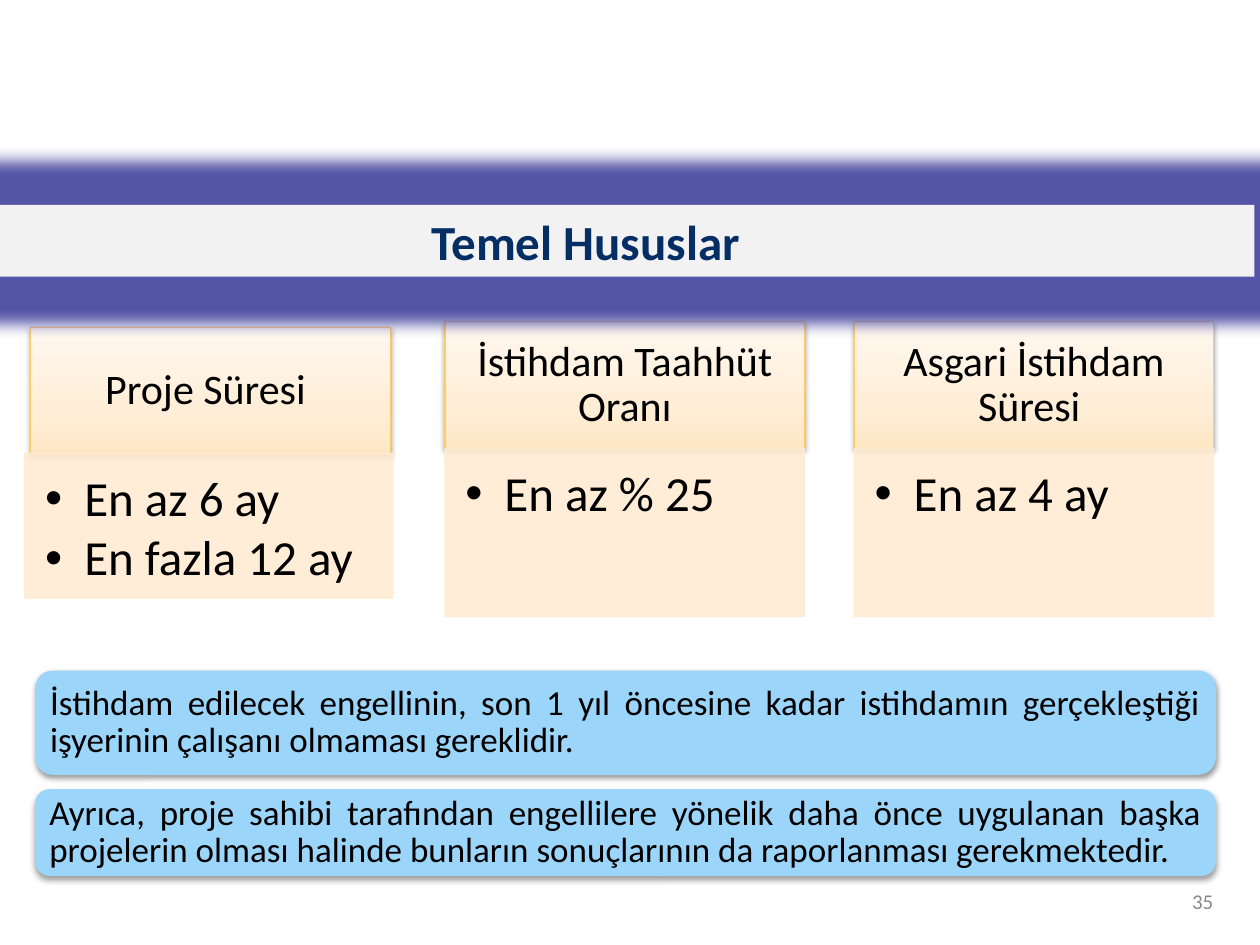
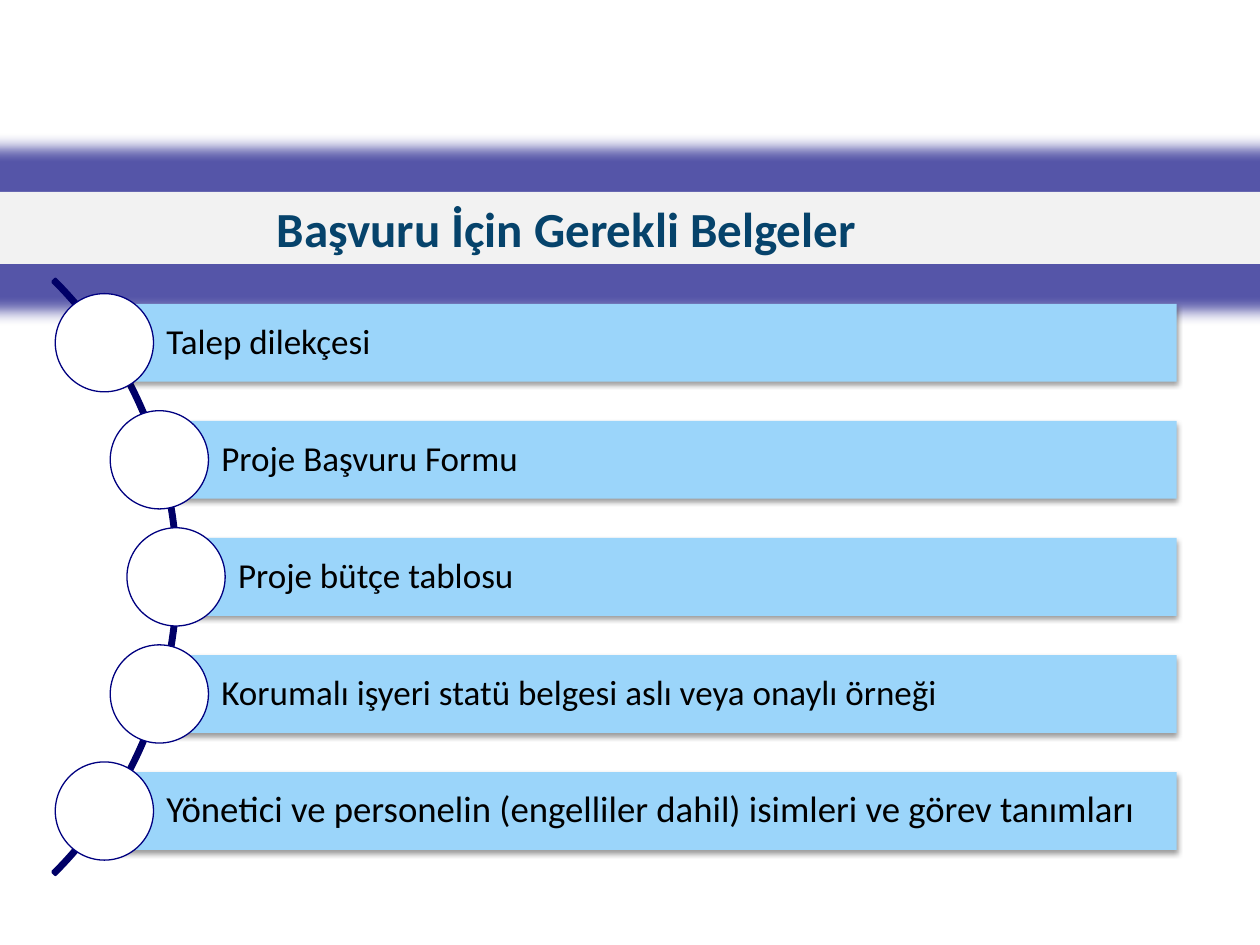
from math import sqrt

from lxml.etree import SubElement
from pptx import Presentation
from pptx.dml.color import RGBColor
from pptx.enum.shapes import MSO_SHAPE
from pptx.enum.text import MSO_ANCHOR, PP_ALIGN
from pptx.oxml import parse_xml
from pptx.oxml.ns import nsdecls, qn
from pptx.util import Cm, Pt

COLORS = {
    "black": "000000",
    "band": "F2F2F2",
    "glow": "5555A8",
    "title_navy": "052E65",
    "title_teal": "06436B",
    "page_number": "898989",
    "card_edge": "FFCC66",
    "card_body": "FFECD3",
    "sky": "9BD5FA",
    "arc": "000067",
    "circle_edge": "000080",
    "white": "FFFFFF",
}
CARD_GRADIENT = ((0, "FFE7C6"), (35, "FFEED7"), (100, "FFF8F0"))


class SlideBuilder:
    font_name = "Calibri"

    def __init__(self):
        self.presentation = Presentation()
        self.presentation.slide_width = Cm(25.4)
        self.presentation.slide_height = Cm(19.05)
        self.slide = None

    def new_slide(self):
        layout = self.presentation.slide_layouts[6]
        self.slide = self.presentation.slides.add_slide(layout)

    def shape(self, kind, box, fill=None, line=None, line_width=0.75):
        shape = self.slide.shapes.add_shape(kind, *map(Cm, box))
        shape.shadow.inherit = False
        if fill:
            shape.fill.solid()
            shape.fill.fore_color.rgb = RGBColor.from_string(COLORS[fill])
        else:
            shape.fill.background()
        if line:
            shape.line.color.rgb = RGBColor.from_string(COLORS[line])
            shape.line.width = Pt(line_width)
        else:
            shape.line.fill.background()
        return shape

    def effect(self, shape, name, color, opacity, **attributes):
        effects = shape.element.spPr.find(qn("a:effectLst"))
        effect = SubElement(effects, qn(f"a:{name}"), attributes)
        tint = SubElement(effect, qn("a:srgbClr"), val=COLORS[color])
        SubElement(tint, qn("a:alpha"), val=str(opacity * 1000))

    def drop_shadow(self, shape):
        self.effect(shape, "outerShdw", "black", 38, blurRad="40000",
                    dist="20000", dir="5400000", rotWithShape="0")

    def card_gradient(self, shape):
        shape.fill.gradient()
        shape.fill.gradient_angle = 90
        stops = shape.element.spPr.find(qn("a:gradFill")).find(qn("a:gsLst"))
        for stop in list(stops):
            stops.remove(stop)
        for percent, color in CARD_GRADIENT:
            stops.append(parse_xml(
                f'<a:gs {nsdecls("a")} pos="{percent * 1000}">'
                f'<a:srgbClr val="{color}"/></a:gs>'))

    def translucent(self, shape, opacity):
        for tint in shape.element.spPr.iter(qn("a:srgbClr")):
            SubElement(tint, qn("a:alpha"), val=str(opacity * 1000))

    def text(self, shape, lines, size, color="black", bold=False,
             align=PP_ALIGN.LEFT, anchor=MSO_ANCHOR.MIDDLE,
             insets=(0.25, 0.13, 0.25, 0.13), spacing=0.9, bullets=False):
        frame = shape.text_frame
        frame.word_wrap = True
        frame.vertical_anchor = anchor
        (frame.margin_left, frame.margin_top,
         frame.margin_right, frame.margin_bottom) = map(Cm, insets)
        frame.text = "\n".join(lines)
        for paragraph in frame.paragraphs:
            paragraph.alignment = align
            paragraph.line_spacing = spacing
            if bullets:
                paragraph.space_after = Pt(4)
                self.bullet(paragraph)
            for run in paragraph.runs:
                run.font.name = self.font_name
                run.font.size = Pt(size)
                run.font.bold = bold
                run.font.color.rgb = RGBColor.from_string(COLORS[color])

    def bullet(self, paragraph):
        properties = paragraph._p.get_or_add_pPr()
        properties.set("marL", str(Cm(0.79)))
        properties.set("indent", str(-Cm(0.79)))
        SubElement(properties, qn("a:buFont"), typeface="Arial")
        SubElement(properties, qn("a:buChar"), char="•")

    def title_band(self, title, top, width, text_left, color):
        band = self.shape(MSO_SHAPE.RECTANGLE, (0, top, width, 1.45), "band")
        self.effect(band, "glow", "glow", 100, rad=str(Pt(18)))
        self.text(band, [title], 28, color, bold=True, spacing=1.0,
                  insets=(text_left, 0.13, 0.25, 0.13))

    def card(self, heading, points, header_box, body_box):
        header = self.shape(MSO_SHAPE.RECTANGLE, header_box, line="card_edge")
        self.card_gradient(header)
        self.drop_shadow(header)
        self.text(header, [heading], 24, align=PP_ALIGN.CENTER,
                  insets=(0.48, 0.28, 0.48, 0.28))
        body = self.shape(MSO_SHAPE.RECTANGLE, body_box, "card_body", "card_body")
        self.translucent(body, 90)
        self.text(body, points, 28, anchor=MSO_ANCHOR.TOP,
                  insets=(0.41, 0.41, 0.56, 0.61), bullets=True)

    def note(self, sentence, top, height):
        note = self.shape(MSO_SHAPE.ROUNDED_RECTANGLE,
                          (0.71, top, 23.8, height), "sky")
        self.drop_shadow(note)
        self.text(note, [sentence], 20, align=PP_ALIGN.JUSTIFY, insets=(0.2,) * 4)

    def page_number(self, number):
        box = self.slide.shapes.add_textbox(Cm(18.21), Cm(17.65), Cm(6.5), Cm(1.02))
        self.text(box, [number], 12, "page_number", align=PP_ALIGN.RIGHT, spacing=1.0)

    def arc(self, center_x, center_y, radius):
        arc = self.shape(
            MSO_SHAPE.BLOCK_ARC,
            (center_x - radius, center_y - radius, 2 * radius, 2 * radius),
            line="arc", line_width=2)
        for index, value in enumerate((189, 27, 0.004)):
            arc.adjustments[index] = value

    def document_row(self, name, center_x, center_y, size):
        bar_height, bar_right, diameter = 1.57, 23.72, 1.98
        bar = self.shape(
            MSO_SHAPE.RECTANGLE,
            (center_x, center_y - bar_height / 2, bar_right - center_x, bar_height),
            "sky")
        self.drop_shadow(bar)
        self.text(bar, [name], size, insets=(1.25, 0.15, 0.15, 0.15))
        self.shape(
            MSO_SHAPE.OVAL,
            (center_x - diameter / 2, center_y - diameter / 2, diameter, diameter),
            "white", "circle_edge")


def build_key_points(builder):
    builder.new_slide()
    builder.page_number("35")
    builder.card("Proje Süresi ", ["En az 6 ay", "En fazla 12 ay"],
                 (0.61, 6.6, 7.26, 2.57), (0.5, 9.14, 7.42, 2.92))
    for left, heading, point in (
        (8.97, "İstihdam Taahhüt Oranı", "En az % 25"),
        (17.22, "Asgari İstihdam Süresi ", "En az 4 ay"),
    ):
        builder.card(heading, [point],
                     (left, 6.48, 7.25, 2.57), (left, 9.05, 7.25, 3.38))
    builder.note("İstihdam edilecek engellinin, son 1 yıl öncesine kadar istihdamın "
                 "gerçekleştiği işyerinin çalışanı olmaması gereklidir.", 13.52, 2.1)
    builder.note("Ayrıca, proje sahibi tarafından engellilere yönelik daha önce "
                 "uygulanan başka projelerin olması halinde bunların sonuçlarının da "
                 "raporlanması gerekmektedir.", 15.91, 1.75)
    builder.title_band("Temel Hususlar", 4.13, 25.29, 8.7, "title_navy")


def build_documents(builder):
    builder.new_slide()
    builder.title_band("Başvuru İçin Gerekli Belgeler", 3.87, 25.4, 5.58, "title_teal")
    center_x, center_y, row_radius, row_step = -4.88, 11.63, 8.43, 2.36
    builder.arc(center_x, center_y, 8.48)
    documents = (
        ("Talep dilekçesi", 20),
        ("Proje Başvuru Formu", 20),
        ("Proje bütçe tablosu", 20),
        ("Korumalı işyeri statü belgesi aslı veya onaylı örneği", 20),
        ("Yönetici ve personelin (engelliler dahil) isimleri ve görev tanımları", 21),
    )
    for index, (name, size) in enumerate(documents):
        offset = (index - 2) * row_step
        row_x = center_x + sqrt(row_radius ** 2 - offset ** 2)
        builder.document_row(name, row_x, center_y + offset, size)


def main():
    builder = SlideBuilder()
    build_key_points(builder)
    build_documents(builder)
    builder.presentation.save("out.pptx")


if __name__ == "__main__":
    main()
